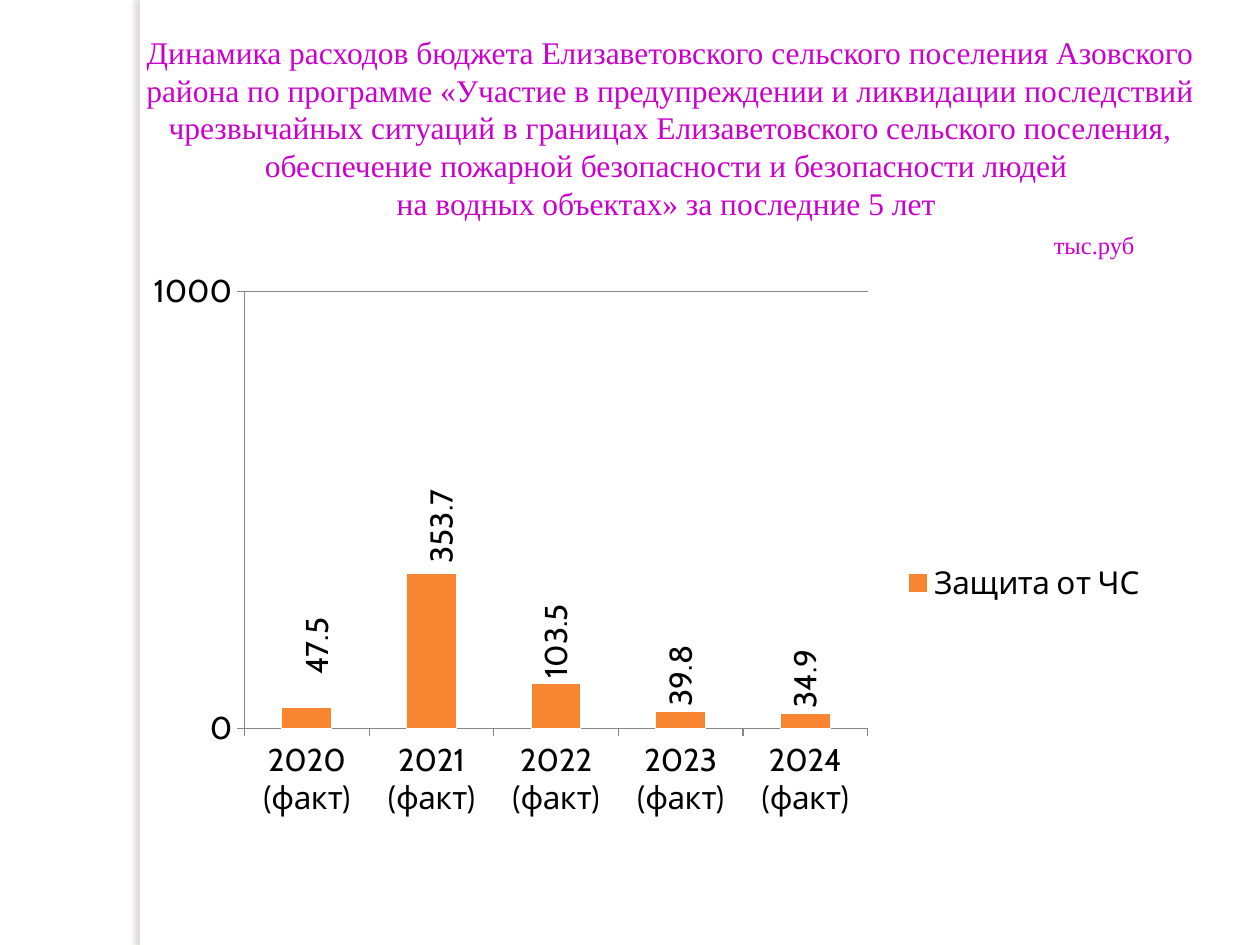
import pptx
import pptx.chart.data
import pptx.dml.color
import pptx.enum.chart
import pptx.enum.shapes
import pptx.enum.text
import pptx.oxml
import pptx.oxml.ns
import pptx.util

Pt = pptx.util.Pt
qn = pptx.oxml.ns.qn
NAMESPACES = pptx.oxml.ns.nsdecls("a", "c")

TITLE_LINES = [
    "Динамика расходов бюджета Елизаветовского сельского поселения Азовского "
    "района по программе «Участие в предупреждении и ликвидации последствий "
    "чрезвычайных ситуаций в границах Елизаветовского сельского поселения, "
    "обеспечение пожарной безопасности и безопасности людей ",
    "на водных объектах» за последние 5 лет ",
]
UNIT = "тыс.руб"
SERIES_NAME = "Защита от ЧС"
SPENDING = {2020: 47.5, 2021: 353.7, 2022: 103.5, 2023: 39.8, 2024: 34.9}
LABEL_OFFSETS = {0: (0.01, -0.05), 1: (0.01, -0.01)}


def color(value):
    return pptx.dml.color.RGBColor.from_string(value)


def apply(target, formats):
    for name, value in formats.items():
        setattr(target, name, value)


def style_font(font, name, size, value):
    apply(font, {"name": name, "size": Pt(size), "bold": False})
    font.color.rgb = color(value)


def manual_layout(x, y, width=None, height=None):
    """Chart layout as fractions; with a size it fixes the inner plot area."""
    parts = {"xMode": "edge", "yMode": "edge"} if width else {}
    if width:
        parts = {"layoutTarget": "inner", **parts}
    parts.update(x=x, y=y)
    if width:
        parts.update(w=width, h=height)
    inner = "".join(f'<c:{tag} val="{value}"/>' for tag, value in parts.items())
    return pptx.oxml.parse_xml(
        f"<c:layout {NAMESPACES}><c:manualLayout>{inner}</c:manualLayout></c:layout>")


def add_side_strip(page, left, top, width, height):
    strip = page.shapes.add_shape(
        pptx.enum.shapes.MSO_SHAPE.RECTANGLE, Pt(left), Pt(top), Pt(width), Pt(height))
    strip.fill.solid()
    strip.fill.fore_color.rgb = color("FFFFFF")
    strip.line.fill.background()
    # Soft shadow towards the left
    strip._element.spPr.append(pptx.oxml.parse_xml(
        f'<a:effectLst {NAMESPACES}><a:outerShdw blurRad="{Pt(3)}" dist="{Pt(3)}" '
        'dir="10800000" algn="tl" rotWithShape="0"><a:srgbClr val="736F63">'
        '<a:alpha val="25000"/></a:srgbClr></a:outerShdw></a:effectLst>'))


def add_title(page, left, top, width, height):
    box = page.shapes.title
    apply(box, {"left": Pt(left), "top": Pt(top), "width": Pt(width), "height": Pt(height)})
    frame = box.text_frame
    apply(frame, {"word_wrap": True,
                  "auto_size": pptx.enum.text.MSO_AUTO_SIZE.NONE,
                  "vertical_anchor": pptx.enum.text.MSO_ANCHOR.TOP})
    align = pptx.enum.text.PP_ALIGN
    rows = [(line, 18, align.CENTER) for line in TITLE_LINES] + [(UNIT, 14, align.RIGHT)]
    for index, (text, size, alignment) in enumerate(rows):
        para = frame.add_paragraph() if index else frame.paragraphs[0]
        apply(para, {"alignment": alignment, "line_spacing": Pt(21.6),
                     "space_before": Pt(0), "space_after": Pt(0)})
        span = para.add_run()
        span.text = text
        style_font(span.font, "Times New Roman", size, "CC00CC")
    # The unit ends short of the right edge
    para._p.get_or_add_pPr().set("marR", str(Pt(45)))


def style_axes(chart):
    marks = pptx.enum.chart.XL_TICK_MARK
    for axis in (chart.category_axis, chart.value_axis):
        apply(axis, {"major_tick_mark": marks.OUTSIDE, "minor_tick_mark": marks.NONE})
        axis.format.line.color.rgb = color("868686")
        axis.format.line.width = Pt(0.75)
    chart.category_axis.tick_label_position = pptx.enum.chart.XL_TICK_LABEL_POSITION.LOW
    apply(chart.value_axis, {"minimum_scale": 0, "maximum_scale": 1000,
                             "major_unit": 1000, "has_major_gridlines": True})
    grid = chart.value_axis.major_gridlines.format.line
    grid.color.rgb = color("868686")
    grid.width = Pt(0.75)


def style_labels(series):
    position = pptx.enum.chart.XL_LABEL_POSITION.OUTSIDE_END
    labels = series.data_labels
    apply(labels, {"show_value": True, "position": position})
    style_font(labels.font, "Cabin", 18, "000000")
    # The first two labels are moved away from their bars
    for index, offset in LABEL_OFFSETS.items():
        label = series.points[index].data_label
        label.position = position
        style_font(label.font, "Cabin", 18, "000000")
    for item in labels._element.findall(qn("c:dLbl")):
        mark = item.find(qn("c:idx"))
        mark.addnext(manual_layout(*LABEL_OFFSETS[int(mark.get("val"))]))
    # Labels read upwards
    for body in labels._element.iter(qn("a:bodyPr")):
        apply_rotation = {"rot": "-5400000", "vert": "horz"}
        for name, value in apply_rotation.items():
            body.set(name, value)


def add_spending_chart(page, left, top, width, height):
    data = pptx.chart.data.CategoryChartData()
    data.categories = [f"{year} (факт)" for year in SPENDING]
    data.add_series(SERIES_NAME, list(SPENDING.values()))
    chart = page.shapes.add_chart(
        pptx.enum.chart.XL_CHART_TYPE.COLUMN_CLUSTERED,
        Pt(left), Pt(top), Pt(width), Pt(height), data).chart
    apply(chart, {"has_title": False, "has_legend": True})
    style_font(chart.font, "Cabin", 18, "000000")
    style_axes(chart)

    # Columns
    plot = chart.plots[0]
    apply(plot, {"gap_width": 150, "vary_by_categories": False})
    series = plot.series[0]
    series.format.fill.solid()
    series.format.fill.fore_color.rgb = color("F88631")
    series.format.line.color.rgb = color("FFFFFF")
    style_labels(series)

    # Plot area and legend places
    area = chart._chartSpace.chart.plotArea
    for old in area.findall(qn("c:layout")):
        area.remove(old)
    area.insert(0, manual_layout(0.088, 0.036, 0.617, 0.77))
    apply(chart.legend, {"position": pptx.enum.chart.XL_LEGEND_POSITION.RIGHT,
                         "include_in_layout": False})
    legend = chart.legend._element
    for old in legend.findall(qn("c:layout")):
        legend.remove(old)
    place = manual_layout(0.735, 0.5, 0.25, 0.1)
    frame = place[0]
    frame.remove(frame.find(qn("c:layoutTarget")))
    legend.find(qn("c:legendPos")).addnext(place)


def main():
    deck = pptx.Presentation()
    apply(deck, {"slide_width": Pt(720), "slide_height": Pt(540)})
    page = deck.slides.add_slide(deck.slide_layouts[5])
    page.background.fill.solid()
    page.background.fill.fore_color.rgb = color("FFFFFF")
    add_side_strip(page, 80, 0, 5.8, 540)
    # The title lies above the strip
    page.shapes._spTree.append(page.shapes.title._element)
    add_title(page, 65.5, 15.1, 635, 140.4)
    add_spending_chart(page, 87.8, 154.8, 578.2, 324.7)
    deck.save("out.pptx")


if __name__ == "__main__":
    main()
